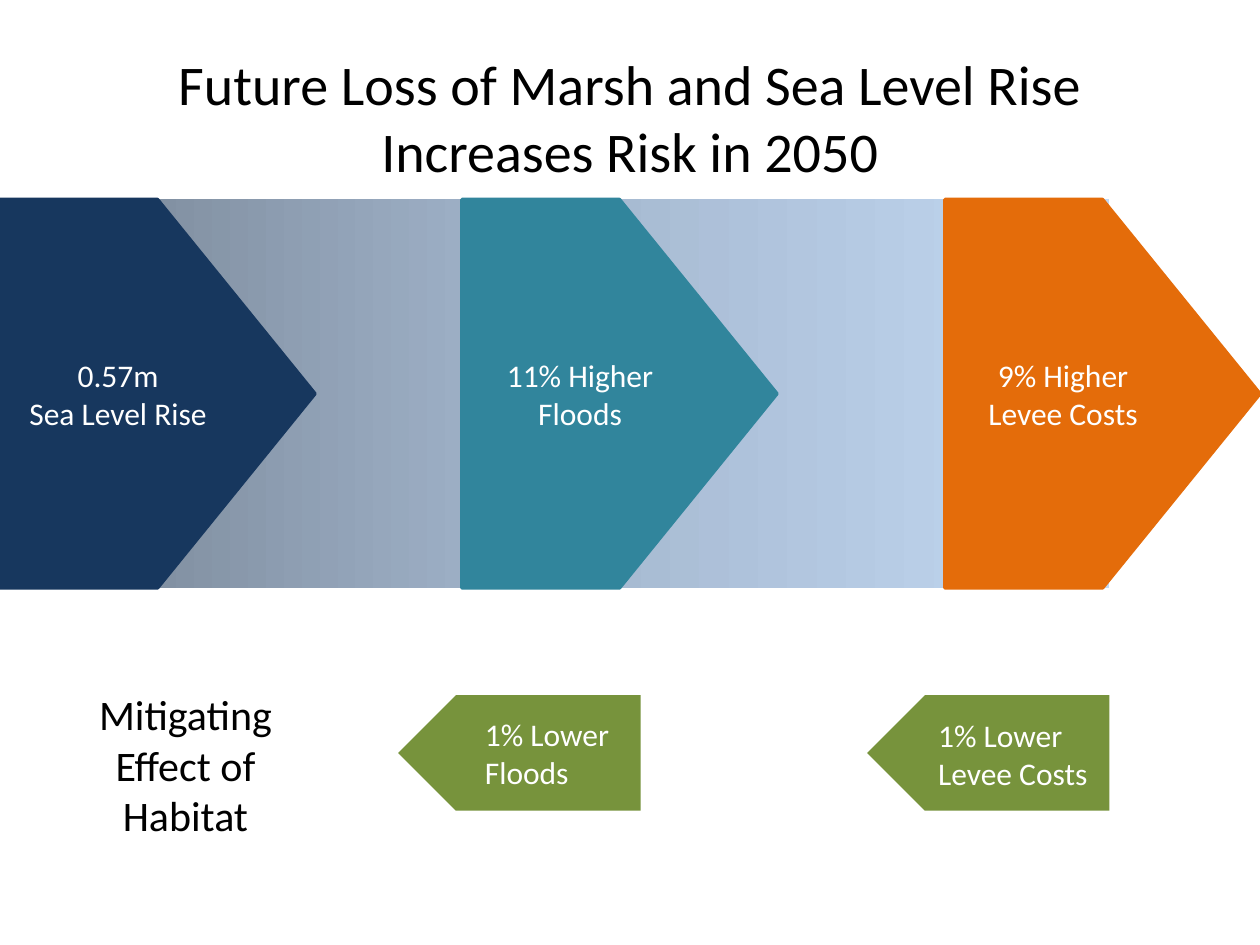
from copy import deepcopy

from pptx import Presentation
from pptx.dml.color import RGBColor
from pptx.enum.shapes import MSO_SHAPE
from pptx.enum.text import MSO_ANCHOR, PP_ALIGN
from pptx.oxml.ns import qn
from pptx.util import Pt

RECTANGLE = MSO_SHAPE.RECTANGLE
PENTAGON = MSO_SHAPE.PENTAGON
LEFT, CENTER = PP_ALIGN.LEFT, PP_ALIGN.CENTER
TOP, MIDDLE = MSO_ANCHOR.TOP, MSO_ANCHOR.MIDDLE

BLACK = RGBColor(0x00, 0x00, 0x00)
WHITE = RGBColor(0xFF, 0xFF, 0xFF)
NAVY = RGBColor(0x17, 0x37, 0x5E)
TEAL = RGBColor(0x31, 0x85, 0x9C)
ORANGE = RGBColor(0xE4, 0x6C, 0x0A)
GREEN = RGBColor(0x77, 0x93, 0x3C)
BAND_COLORS = (
    RGBColor(0x74, 0x81, 0x91),
    RGBColor(0xA4, 0xB7, 0xCE),
    RGBColor(0xC3, 0xD9, 0xF4),
)

FONT = "Calibri"
BAND_TOP, BAND_HEIGHT = 114, 222
STAGE_WIDTH = 180
TAG_TOP, TAG_WIDTH, TAG_HEIGHT = 397.25, 138.5, 66


class SlideBuilder:
    def __init__(self, slide):
        self.slide = slide

    def fill_text(self, frame, lines, size, color, align, anchor):
        frame.vertical_anchor = anchor
        frame.text = "\n".join(lines)
        for paragraph in frame.paragraphs:
            paragraph.alignment = align
            paragraph.font.name = FONT
            paragraph.font.size = Pt(size)
            paragraph.font.color.rgb = color

    def text(self, box, lines, size, color, align=CENTER, anchor=TOP, wrap=True):
        shape = self.slide.shapes.add_textbox(*map(Pt, box))
        shape.text_frame.word_wrap = wrap
        self.fill_text(shape.text_frame, lines, size, color, align, anchor)

    def shape(self, kind, box):
        shape = self.slide.shapes.add_shape(kind, *map(Pt, box))
        shape.shadow.inherit = False
        shape.line.fill.background()
        return shape

    def band(self, box, colors):
        shape = self.shape(RECTANGLE, box)
        shape.fill.gradient()
        shape.fill.gradient_angle = 0
        stop_list = shape.element.spPr.find(qn("a:gradFill")).find(qn("a:gsLst"))
        stop_list.insert(1, deepcopy(stop_list[0]))
        for index, (stop, color) in enumerate(zip(shape.fill.gradient_stops, colors)):
            stop.position = index / (len(colors) - 1)
            stop.color.rgb = color

    def stage(self, left, color, lines):
        shape = self.shape(PENTAGON, (left, BAND_TOP, STAGE_WIDTH, BAND_HEIGHT))
        shape.fill.solid()
        shape.fill.fore_color.rgb = color
        shape.line.color.rgb = color
        shape.line.width = Pt(2)
        self.fill_text(shape.text_frame, lines, 18, WHITE, CENTER, MIDDLE)

    def tag(self, left, text_left, text_top, text_width, lines):
        shape = self.shape(PENTAGON, (left, TAG_TOP, TAG_WIDTH, TAG_HEIGHT))
        shape.rotation = 180
        shape.fill.solid()
        shape.fill.fore_color.rgb = GREEN
        self.text((text_left, text_top, text_width, 51), lines, 18, WHITE, LEFT, wrap=False)


def main():
    presentation = Presentation()
    presentation.slide_width = Pt(720)
    presentation.slide_height = Pt(540)
    builder = SlideBuilder(presentation.slides.add_slide(presentation.slide_layouts[6]))

    builder.band((-2, BAND_TOP, 636, BAND_HEIGHT), BAND_COLORS)
    builder.text(
        (36, 21.6, 648, 90),
        ["Future Loss of Marsh and Sea Level Rise Increases Risk in 2050"],
        32, BLACK, anchor=MIDDLE,
    )
    for left, color, lines in (
        (0, NAVY, ["0.57m", "Sea Level Rise"]),
        (264, TEAL, ["11% Higher Floods"]),
        (540, ORANGE, ["9% Higher Levee Costs"]),
    ):
        builder.stage(left, color, lines)

    builder.text((24, 390, 164, 94.5), ["Mitigating Effect of Habitat"], 24, BLACK)
    builder.tag(227.5, 270, 405, 90.5, ["1% Lower", "Floods"])
    builder.tag(495.5, 529, 405.5, 101, ["1% Lower", "Levee Costs"])

    presentation.save("out.pptx")


if __name__ == "__main__":
    main()
